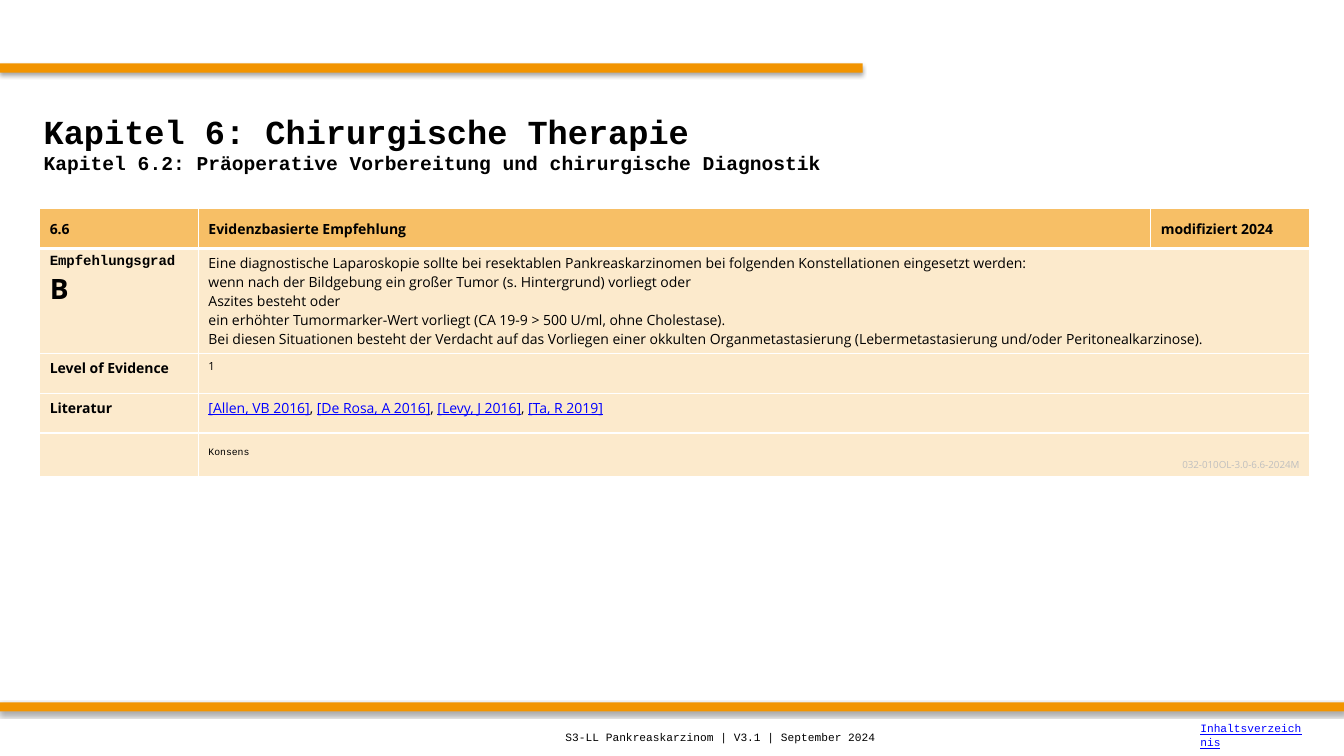
from dataclasses import dataclass

from lxml.etree import SubElement
from pptx import Presentation
from pptx.dml.color import RGBColor
from pptx.enum.shapes import MSO_SHAPE
from pptx.enum.text import MSO_ANCHOR, PP_ALIGN
from pptx.oxml.ns import qn
from pptx.slide import Slide
from pptx.table import _Cell
from pptx.text.text import TextFrame, _Paragraph
from pptx.util import Cm, Pt

COLORS = {
    "orange": "F29400",
    "header": "F7BF66",
    "body": "FCEACC",
    "text": "000000",
    "link": "0000FF",
    "code": "BFBFBF",
    "border": "FFFFFF",
}
SANS, MONO = "Open Sans", "Courier New"


@dataclass
class Line:
    text: str
    size: float = 10
    font: str = SANS
    bold: bool = False
    color: str = "text"
    underline: bool = False
    align: PP_ALIGN = PP_ALIGN.LEFT


@dataclass
class Bar:
    top: float
    width: float


@dataclass
class Label:
    left: float
    top: float
    width: float
    height: float
    lines: list[Line]


@dataclass
class Row:
    height: float
    cells: list[list[Line]]
    fill: str = "body"
    anchors: tuple[MSO_ANCHOR, ...] = (MSO_ANCHOR.TOP,) * 3


REFERENCES = ["[Allen, VB 2016]", "[De Rosa, A 2016]", "[Levy, J 2016]", "[Ta, R 2019]"]
BARS = [Bar(1.6, 21.74), Bar(17.7, 33.87)]
COLUMN_WIDTHS = [4, 24, 4]
LABELS = [
    Label(0.85, 2.12, 32.17, 2.96, [
        Line("Kapitel 6: Chirurgische Therapie", 24, MONO, True),
        Line("Kapitel 6.2: Präoperative Vorbereitung und chirurgische Diagnostik", 14, MONO, True),
    ]),
    Label(14, 18.07, 14, 1, [Line("S3-LL Pankreaskarzinom | V3.1 | September 2024", 8, MONO)]),
    Label(30, 18.02, 3.1, 1, [
        Line("Inhaltsverzeichnis", 8, MONO, color="link", underline=True)]),
]
ROWS = [
    Row(1, [
        [Line("6.6", bold=True)],
        [Line("Evidenzbasierte Empfehlung", bold=True)],
        [Line("modifiziert 2024", bold=True)],
    ], "header", (MSO_ANCHOR.MIDDLE,) * 3),
    Row(2.65, [
        [Line("Empfehlungsgrad", font=MONO, bold=True), Line("B", 20, bold=True)],
        [
            Line("Eine diagnostische Laparoskopie sollte bei resektablen Pankreaskarzinomen "
                 "bei folgenden Konstellationen eingesetzt werden:"),
            Line("wenn nach der Bildgebung ein großer Tumor (s. Hintergrund) vorliegt oder"),
            Line("Aszites besteht oder"),
            Line("ein erhöhter Tumormarker-Wert vorliegt (CA 19-9 > 500 U/ml, ohne Cholestase)."),
            Line("Bei diesen Situationen besteht der Verdacht auf das Vorliegen einer okkulten "
                 "Organmetastasierung (Lebermetastasierung und/oder Peritonealkarzinose)."),
        ],
    ]),
    Row(1, [[Line("Level of Evidence", bold=True)], [Line("1", 8)]]),
    Row(1, [[Line("Literatur", bold=True)], [Line("")]]),
    Row(1.1, [
        [],
        [Line("Konsens", 7, MONO),
         Line("032-010OL-3.0-6.6-2024M", 7, color="code", align=PP_ALIGN.RIGHT)],
    ], anchors=(MSO_ANCHOR.TOP, MSO_ANCHOR.BOTTOM, MSO_ANCHOR.TOP)),
]
LITERATURE_ROW = 3


def rgb(name: str) -> RGBColor:
    return RGBColor.from_string(COLORS[name])


def write_lines(frame: TextFrame, lines: list[Line]) -> None:
    for index, line in enumerate(lines):
        paragraph = frame.paragraphs[0] if index == 0 else frame.add_paragraph()
        paragraph.text = line.text
        paragraph.alignment = line.align
        font = paragraph.font
        font.name, font.size = line.font, Pt(line.size)
        font.bold, font.underline = line.bold, line.underline
        font.color.rgb = rgb(line.color)


def write_references(paragraph: _Paragraph) -> None:
    for index, reference in enumerate(REFERENCES):
        if index:
            paragraph.add_run().text = ", "
        run = paragraph.add_run()
        run.text = reference
        run.font.underline = True
        run.font.color.rgb = rgb("link")


def add_bar(slide: Slide, bar: Bar) -> None:
    shape = slide.shapes.add_shape(
        MSO_SHAPE.RECTANGLE, 0, Cm(bar.top), Cm(bar.width), Cm(0.23))
    shape.fill.solid()
    shape.fill.fore_color.rgb = rgb("orange")
    shape.line.fill.background()
    shape.shadow.inherit = False
    effects = shape._element.spPr.find(qn("a:effectLst"))
    shadow = SubElement(effects, qn("a:outerShdw"), blurRad=str(Pt(3.1)),
                        dist=str(Pt(1.8)), dir="5400000", rotWithShape="0")
    color = SubElement(shadow, qn("a:srgbClr"), val=COLORS["text"])
    SubElement(color, qn("a:alpha"), val="35000")


def add_label(slide: Slide, label: Label) -> None:
    box = slide.shapes.add_textbox(
        Cm(label.left), Cm(label.top), Cm(label.width), Cm(label.height))
    frame = box.text_frame
    frame.word_wrap = True
    frame.vertical_anchor = MSO_ANCHOR.MIDDLE
    write_lines(frame, label.lines)


def set_borders(cell: _Cell, top: float, bottom: float) -> None:
    properties = cell._tc.get_or_add_tcPr()
    for side, width in {"L": 1, "R": 1, "T": top, "B": bottom}.items():
        line = SubElement(properties, qn(f"a:ln{side}"), w=str(Pt(width)))
        fill = SubElement(line, qn("a:solidFill"))
        SubElement(fill, qn("a:srgbClr"), val=COLORS["border"])


def add_recommendation_table(slide: Slide) -> None:
    table = slide.shapes.add_table(
        len(ROWS), len(COLUMN_WIDTHS), Cm(1), Cm(5.26),
        Cm(sum(COLUMN_WIDTHS)), Cm(sum(row.height for row in ROWS))).table
    table.first_row = table.horz_banding = False
    for column, width in zip(table.columns, COLUMN_WIDTHS):
        column.width = Cm(width)
    for index, row in enumerate(ROWS):
        table.rows[index].height = Cm(row.height)
        for position, anchor in enumerate(row.anchors):
            cell = table.cell(index, position)
            set_borders(cell, 3 if index == 1 else 1, 3 if index == 0 else 1)
            cell.fill.solid()
            cell.fill.fore_color.rgb = rgb(row.fill)
            cell.vertical_anchor = anchor
        for position, lines in enumerate(row.cells):
            write_lines(table.cell(index, position).text_frame, lines)
        if len(row.cells) < len(COLUMN_WIDTHS):
            table.cell(index, 1).merge(table.cell(index, 2))
    write_references(table.cell(LITERATURE_ROW, 1).text_frame.paragraphs[0])


def main() -> None:
    presentation = Presentation()
    presentation.slide_width, presentation.slide_height = Cm(33.87), Cm(19.05)
    slide = presentation.slides.add_slide(presentation.slide_layouts[6])
    for bar in BARS:
        add_bar(slide, bar)
    add_recommendation_table(slide)
    for label in LABELS:
        add_label(slide, label)
    presentation.save("out.pptx")


if __name__ == "__main__":
    main()
